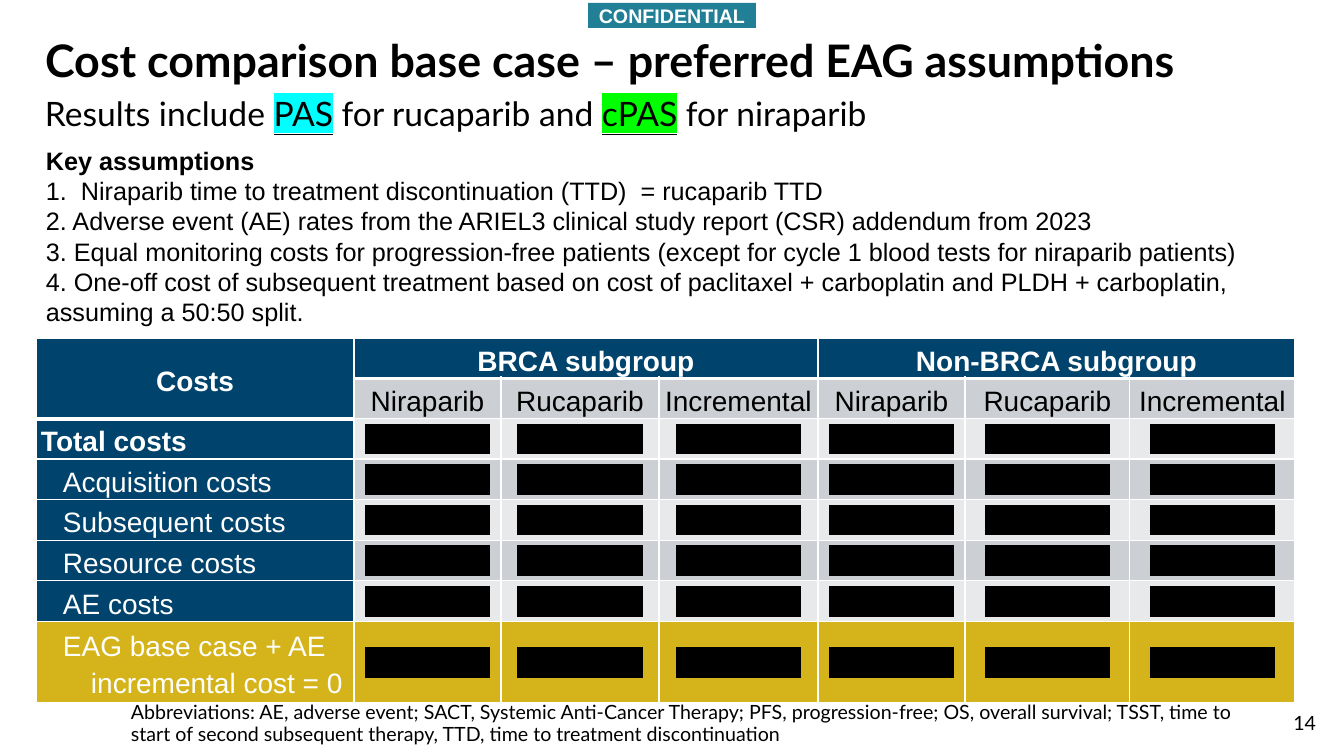
from dataclasses import dataclass

from lxml.etree import SubElement
from pptx import Presentation
from pptx.dml.color import RGBColor
from pptx.enum.shapes import MSO_SHAPE
from pptx.enum.text import MSO_ANCHOR, PP_ALIGN
from pptx.oxml import parse_xml
from pptx.oxml.ns import nsdecls, qn
from pptx.util import Pt

TITLE = "Cost comparison base case – preferred EAG assumptions"
SUBTITLE = [
    ("Results include ", None),
    ("PAS", "00FFFF"),
    (" for rucaparib and ", None),
    ("cPAS", "00FF00"),
    (" for niraparib", None),
]
ASSUMPTIONS = [
    "Key assumptions",
    "1.  Niraparib time to treatment discontinuation (TTD)  = rucaparib TTD",
    "2. Adverse event (AE) rates from the ARIEL3 clinical study report (CSR) addendum from 2023",
    "3. Equal monitoring costs for progression-free patients (except for cycle 1 blood tests for niraparib patients)",
    "4. One-off cost of subsequent treatment based on cost of paclitaxel + carboplatin and PLDH + carboplatin, "
    "assuming a 50:50 split.",
]
SUBGROUPS = ["BRCA subgroup", "Non-BRCA subgroup"]
MEASURES = ["Niraparib", "Rucaparib", "Incremental"]
COST_ROWS = [
    "Total costs",
    "Acquisition costs",
    "Subsequent costs",
    "Resource costs",
    "AE costs",
    "EAG base case + AE incremental cost = 0",
]
REDACTED = "**********"
ABBREVIATIONS = (
    "Abbreviations: AE, adverse event; SACT, Systemic Anti-Cancer Therapy; PFS, progression-free; "
    "OS, overall survival; TSST, time to start of second subsequent therapy, TTD, time to treatment discontinuation"
)
COLUMN_WIDTHS = [318, 147, 158, 159, 147, 165, 165]
ROW_HEIGHTS = [40, 40, 40, 40, 41, 40, 41, 80]


@dataclass(frozen=True)
class Theme:
    black: str = "000000"
    white: str = "FFFFFF"
    navy: str = "00436C"
    gold: str = "D4B41A"
    teal: str = "228096"
    dark_band: str = "CCCFD4"
    light_band: str = "E7E9EB"
    heading: str = "Lato"
    body: str = "Arial"
    redaction: str = "Calibri"
    title_size: int = 32
    subtitle_size: int = 24
    table_size: int = 20
    body_size: int = 18
    small_size: int = 14


THEME = Theme()


def px(length):
    return round(length * 914400 / 100.8)


def add_run(paragraph, text, font, size, color=THEME.black, bold=False, highlight=None):
    run = paragraph.add_run()
    run.text = text
    run.font.name = font
    run.font.size = Pt(size)
    run.font.bold = bold
    run.font.color.rgb = RGBColor.from_string(color)
    if highlight:
        run.font.underline = True
        mark = parse_xml(f'<a:highlight {nsdecls("a")}><a:srgbClr val="{highlight}"/></a:highlight>')
        run.font.fill._xPr.find(qn("a:solidFill")).addnext(mark)


def add_text_box(slide, left, top, width, height, anchor=MSO_ANCHOR.TOP):
    frame = slide.shapes.add_textbox(px(left), px(top), px(width), px(height)).text_frame
    frame.word_wrap = True
    frame.vertical_anchor = anchor
    return frame


def set_borders(cell, bottom=1):
    properties = cell._tc.get_or_add_tcPr()
    for index, (side, width) in enumerate([("L", 1), ("R", 1), ("T", 1), ("B", bottom)]):
        line = parse_xml(
            f'<a:ln{side} {nsdecls("a")} w="{Pt(width)}"><a:solidFill>'
            f'<a:srgbClr val="{THEME.white}"/></a:solidFill></a:ln{side}>'
        )
        properties.insert(index, line)


def fill_cell(cell, color, margin=5):
    cell.fill.solid()
    cell.fill.fore_color.rgb = RGBColor.from_string(color)
    cell.vertical_anchor = MSO_ANCHOR.MIDDLE
    cell.margin_left = cell.margin_right = px(margin)
    cell.margin_top = cell.margin_bottom = 0


def write_label(cell, text, color=THEME.white, bold=False, centered=True, indented=False):
    paragraph = cell.text_frame.paragraphs[0]
    paragraph.alignment = PP_ALIGN.CENTER if centered else PP_ALIGN.LEFT
    paragraph.line_spacing = 1.2
    paragraph.space_after = Pt(2)
    if indented:
        properties = paragraph._p.get_or_add_pPr()
        properties.set("marL", str(px(50)))
        properties.set("indent", str(px(-28)))
    add_run(paragraph, text, THEME.body, THEME.table_size, color, bold)


def add_cost_table(slide):
    table = slide.shapes.add_table(
        len(ROW_HEIGHTS), len(COLUMN_WIDTHS), px(36), px(338), px(sum(COLUMN_WIDTHS)), px(sum(ROW_HEIGHTS))
    ).table
    table.first_row = table.horz_banding = False
    for column, width in zip(table.columns, COLUMN_WIDTHS):
        column.width = px(width)
    for row, height in zip(table.rows, ROW_HEIGHTS):
        row.height = px(height)

    table.cell(0, 0).merge(table.cell(1, 0))
    write_label(table.cell(0, 0), "Costs", bold=True)
    for group, subgroup in enumerate(SUBGROUPS):
        first = 1 + group * len(MEASURES)
        table.cell(0, first).merge(table.cell(0, first + len(MEASURES) - 1))
        write_label(table.cell(0, first), subgroup, bold=True)
        for offset, measure in enumerate(MEASURES):
            write_label(table.cell(1, first + offset), measure, THEME.black)

    last_row = len(ROW_HEIGHTS) - 1
    for row in range(len(ROW_HEIGHTS)):
        for column in range(len(COLUMN_WIDTHS)):
            cell = table.cell(row, column)
            is_value = row > 1 and column > 0
            if row == last_row:
                color = THEME.gold
            elif row == 0 or column == 0:
                color = THEME.navy
            else:
                color = THEME.dark_band if row % 2 else THEME.light_band
            fill_cell(cell, color, 0 if is_value else 5)
            set_borders(cell, 3 if row == 0 or (row == 1 and column == 0) else 1)
            if is_value:
                paragraph = cell.text_frame.paragraphs[0]
                paragraph.alignment = PP_ALIGN.CENTER
                add_run(paragraph, REDACTED, THEME.redaction, THEME.body_size, highlight=THEME.black)

    for index, label in enumerate(COST_ROWS):
        is_total = index == 0
        write_label(table.cell(index + 2, 0), label, bold=is_total, centered=False, indented=not is_total)


def add_title(slide):
    title = slide.shapes.title
    title.left, title.top, title.width, title.height = px(35), px(34), px(1240), px(66)
    title.text_frame.vertical_anchor = MSO_ANCHOR.TOP
    paragraph = title.text_frame.paragraphs[0]
    paragraph.alignment = PP_ALIGN.LEFT
    paragraph.line_spacing = 0.9
    add_run(paragraph, TITLE, THEME.heading, THEME.title_size, bold=True)


def add_confidential_tag(slide):
    tag = slide.shapes.add_shape(MSO_SHAPE.RECTANGLE, px(588), px(3), px(168), px(25))
    tag.shadow.inherit = False
    tag.fill.solid()
    tag.fill.fore_color.rgb = RGBColor.from_string(THEME.teal)
    tag.line.fill.background()
    tag.text_frame.vertical_anchor = MSO_ANCHOR.MIDDLE
    paragraph = tag.text_frame.paragraphs[0]
    paragraph.alignment = PP_ALIGN.CENTER
    add_run(paragraph, "CONFIDENTIAL", THEME.body, THEME.small_size, THEME.white, True)


def main():
    presentation = Presentation()
    presentation.slide_width, presentation.slide_height = px(1344), px(756)
    slide = presentation.slides.add_slide(presentation.slide_layouts[5])
    add_title(slide)

    paragraph = add_text_box(slide, 35, 92, 1240, 46).paragraphs[0]
    paragraph.line_spacing = 0.9
    for text, highlight in SUBTITLE:
        add_run(paragraph, text, THEME.heading, THEME.subtitle_size, highlight=highlight)

    frame = add_text_box(slide, 36, 139, 1272, 194, MSO_ANCHOR.MIDDLE)
    for index, text in enumerate(ASSUMPTIONS):
        paragraph = frame.add_paragraph() if index else frame.paragraphs[0]
        add_run(paragraph, text, THEME.body, THEME.body_size, bold=index == 0)

    add_cost_table(slide)
    add_confidential_tag(slide)

    paragraph = add_text_box(slide, 121, 698, 1138, 49).paragraphs[0]
    paragraph.line_spacing = 0.9
    add_run(paragraph, ABBREVIATIONS, THEME.heading, THEME.small_size)

    paragraph = add_text_box(slide, 1275, 706, 51, 40).paragraphs[0]
    paragraph.alignment = PP_ALIGN.RIGHT
    add_run(paragraph, "14", THEME.heading, THEME.small_size)
    presentation.save("out.pptx")


if __name__ == "__main__":
    main()
